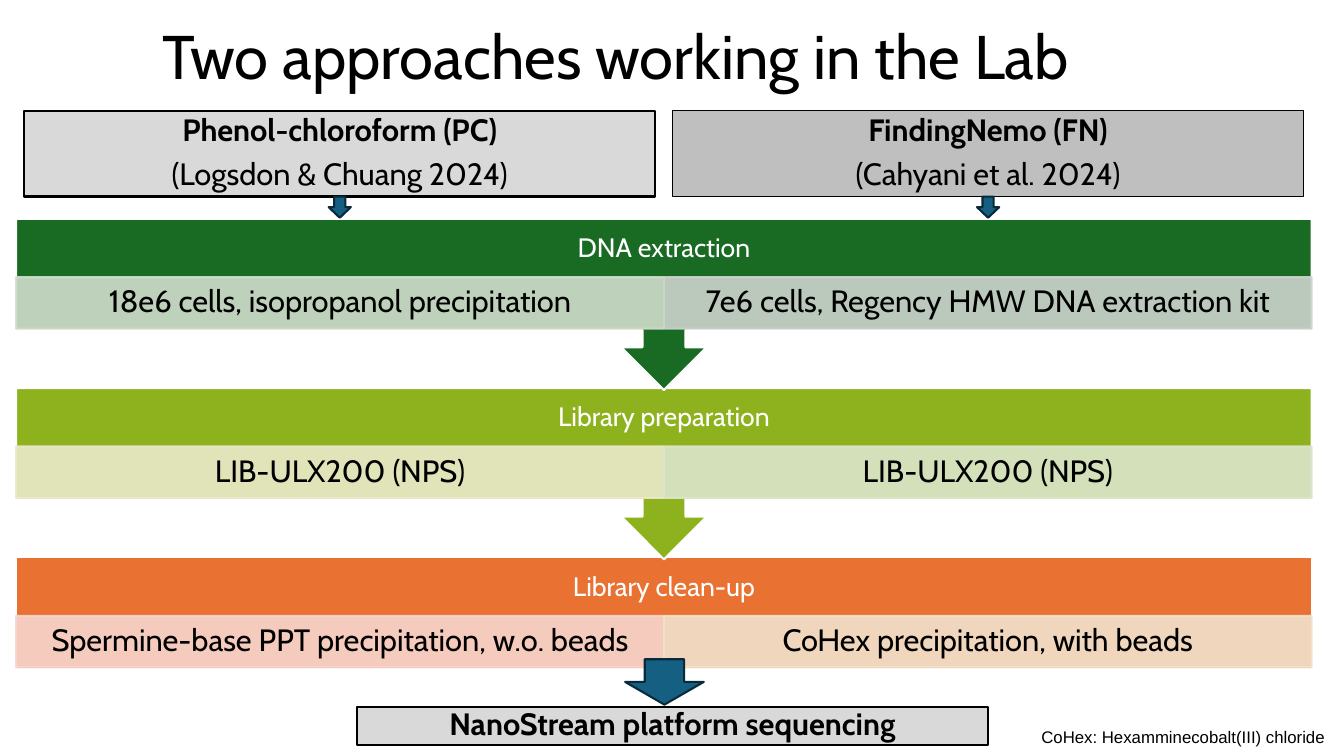
from lxml import etree
from pptx import Presentation
from pptx.dml.color import RGBColor
from pptx.enum.shapes import MSO_SHAPE
from pptx.enum.text import MSO_ANCHOR, PP_ALIGN
from pptx.oxml.ns import qn
from pptx.util import Inches, Pt

RECT = MSO_SHAPE.RECTANGLE
CALLOUT = MSO_SHAPE.DOWN_ARROW_CALLOUT
ARROW = MSO_SHAPE.DOWN_ARROW
MIDDLE, TOP = MSO_ANCHOR.MIDDLE, MSO_ANCHOR.TOP
CENTER, LEFT = PP_ALIGN.CENTER, PP_ALIGN.LEFT

COLORS = {
    "white": "FFFFFF", "black": "000000",
    "light gray": "D9D9D9", "mid gray": "BFBFBF",
    "blue": "156082", "navy": "092A39",
    "green": "196B24", "lime": "8EB21E", "orange": "E97132",
    "pale green": "D1DDCB", "pale teal": "CCD4CD",
    "pale yellow": "EBE9CA", "pale lime": "DCE5CA",
    "pale pink": "F7D5CE", "pale peach": "F1E1CC",
}
BODY_FONT = "Cabin"
CELL_INSETS = (0.17, 0.03)
STAGE_PITCH = 1.68
STAGE_HEIGHT = 1.7
LAST_STAGE_HEIGHT = 1.11

# heading, heading colour, then text and colour of each approach
STAGES = [
    ("DNA extraction", "green",
     [("18e6 cells, isopropanol precipitation", "pale green"),
      ("7e6 cells, Regency HMW DNA extraction kit", "pale teal")]),
    ("Library preparation", "lime",
     [("LIB-ULX200 (NPS)", "pale yellow"),
      ("LIB-ULX200 (NPS)", "pale lime")]),
    ("Library clean-up", "orange",
     [("Spermine-base PPT precipitation, w.o. beads", "pale pink"),
      ("CoHex precipitation, with beads", "pale peach")]),
]


def rgb(name):
    return RGBColor.from_string(COLORS[name])


def write(shape, lines, size, color="black", font=BODY_FONT, align=CENTER,
          anchor=MIDDLE, insets=(0.1, 0.05), spacing=0.9):
    """Fill a shape with (text, bold) lines."""
    frame = shape.text_frame
    frame.word_wrap = True
    frame.vertical_anchor = anchor
    frame.margin_left = frame.margin_right = Inches(insets[0])
    frame.margin_top = frame.margin_bottom = Inches(insets[1])
    for index, (text, bold) in enumerate(lines):
        paragraph = frame.add_paragraph() if index else frame.paragraphs[0]
        paragraph.alignment = align
        paragraph.line_spacing = spacing
        if index < len(lines) - 1:
            paragraph.space_after = Pt(0.35 * size)
        run = paragraph.add_run()
        run.text = text
        run.font.name = font
        run.font.size = Pt(size)
        run.font.bold = bold
        run.font.color.rgb = rgb(color)


def add_text(slide, box, *args, **options):
    write(slide.shapes.add_textbox(*map(Inches, box)), *args, **options)


def add_block(slide, kind, box, fill, line, width=1.5, opacity=100):
    block = slide.shapes.add_shape(kind, *map(Inches, box))
    block.shadow.inherit = False
    block.fill.solid()
    block.fill.fore_color.rgb = rgb(fill)
    block.line.color.rgb = rgb(line)
    block.line.width = Pt(width)
    if opacity < 100:
        for color in block._element.spPr.iter(qn("a:srgbClr")):
            etree.SubElement(color, qn("a:alpha")).set("val", str(opacity * 1000))
    return block


def add_stage(slide, box, heading, color, cells, last):
    """Coloured band, with an arrow to the next stage, over two cells."""
    left, top, width, _ = box
    add_block(slide, RECT if last else CALLOUT, box, color, "white")
    add_text(slide, (left, top, width, 0.6), [(heading, False)], 19, "white",
             insets=(0.15, 0.15))
    cell_width = width / len(cells)
    for column, (text, tint) in enumerate(cells):
        cell_box = (left + column * cell_width, top + 0.58, cell_width, 0.51)
        cell = add_block(slide, RECT, cell_box, tint, tint, opacity=90)
        write(cell, [(text, False)], 22, insets=CELL_INSETS)


def add_stages(slide, left, top, width):
    # The last stage goes to the back, so each arrow tip overlaps the next band
    for index, stage in reversed(list(enumerate(STAGES))):
        last = index == len(STAGES) - 1
        height = LAST_STAGE_HEIGHT if last else STAGE_HEIGHT
        add_stage(slide, (left, top + index * STAGE_PITCH, width, height),
                  *stage, last)


def add_label(slide, box, lines, fill, border):
    label = add_block(slide, RECT, box, fill, "black", border)
    write(label, lines, 22, insets=CELL_INSETS)


def add_arrow(slide, center, top, width, height):
    add_block(slide, ARROW, (center - width / 2, top, width, height),
              "blue", "navy")


def add_approach(slide, box, name, citation, fill, border):
    """Header of one approach with its small arrow below."""
    left, top, width, height = box
    add_label(slide, box, [(name, True), (citation, False)], fill, border)
    add_arrow(slide, left + width / 2, top + height, 0.22, 0.21)


def add_sequencing(slide, box):
    """Common last step with its arrow above."""
    left, top, width, _ = box
    add_arrow(slide, left + width / 2 - 0.08, top - 0.47, 0.78, 0.45)
    add_label(slide, box, [("NanoStream platform sequencing", True)],
              "light gray", 1.5)


def main():
    deck = Presentation()
    deck.slide_width, deck.slide_height = Inches(13.33), Inches(7.5)
    slide = deck.slides.add_slide(deck.slide_layouts[6])

    add_stages(slide, 0.16, 2.17, 12.85)
    add_text(slide, (10.23, 7.16, 3.1, 0.3),
             [("CoHex: Hexamminecobalt(III) chloride", False)], 12,
             font="Arial", align=LEFT, anchor=TOP, spacing=1.0)
    add_approach(slide, (0.24, 1.1, 6.26, 0.85), "Phenol-chloroform (PC)",
                 "(Logsdon & Chuang 2024)", "light gray", 1.5)
    add_approach(slide, (6.67, 1.1, 6.26, 0.85), "FindingNemo (FN)",
                 "(Cahyani et al. 2024)", "mid gray", 0.75)
    add_text(slide, (1.51, -0.13, 11.5, 1.45),
             [("Two approaches working in the Lab", False)], 44, align=LEFT)
    add_sequencing(slide, (3.54, 7.01, 6.26, 0.38))

    deck.save("out.pptx")


if __name__ == "__main__":
    main()
